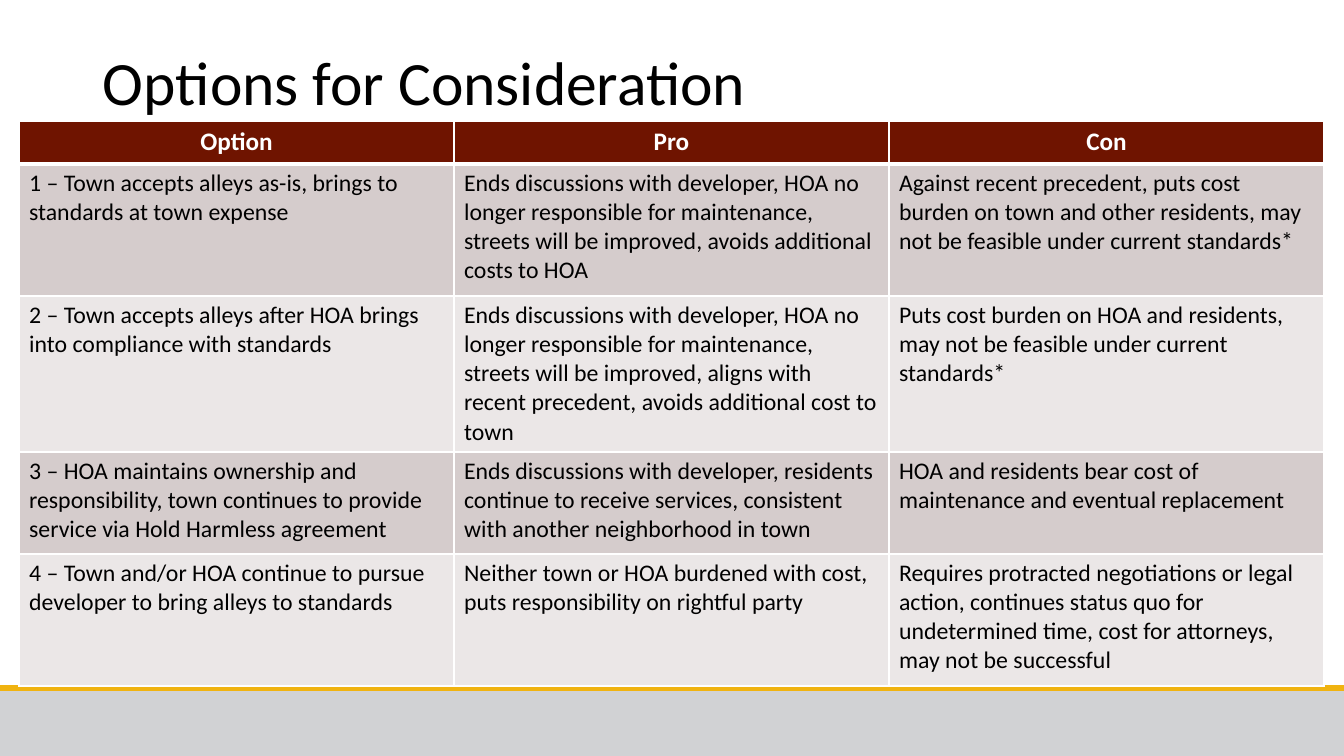
from dataclasses import dataclass

from lxml.etree import SubElement
from pptx import Presentation
from pptx.dml.color import RGBColor
from pptx.enum.shapes import MSO_CONNECTOR, MSO_SHAPE
from pptx.enum.text import MSO_ANCHOR, PP_ALIGN
from pptx.oxml.ns import qn
from pptx.util import Emu, Pt

EMU_PER_PX = 914400 / 100.8
SLIDE_W, SLIDE_H = 1344, 756
FOOTER_TOP = 688
TABLE_LEFT, TABLE_TOP, COL_W = 19, 121, 435
ROW_HEIGHTS = [43, 132, 156, 102, 132]
FONT = "Calibri"
COLORS = {
    "footer": "D1D2D4",
    "rule": "F0B310",
    "header": "6F1400",
    "odd": "D5CCCC",
    "even": "EBE7E7",
    "white": "FFFFFF",
    "black": "000000",
}


@dataclass
class Option:
    name: str
    pro: str
    con: str


HEADER = Option("Option", "Pro", "Con")
OPTIONS = [
    Option(
        "1 – Town accepts alleys as-is, brings to standards at town expense",
        "Ends discussions with developer, HOA no longer responsible for maintenance, "
        "streets will be improved, avoids additional costs to HOA",
        "Against recent precedent, puts cost burden on town and other residents, "
        "may not be feasible under current standards*",
    ),
    Option(
        "2 – Town accepts alleys after HOA brings into compliance with standards",
        "Ends discussions with developer, HOA no longer responsible for maintenance, "
        "streets will be improved, aligns with recent precedent, avoids additional cost to town",
        "Puts cost burden on HOA and residents, may not be feasible under current standards*",
    ),
    Option(
        "3 – HOA maintains ownership and responsibility, town continues to provide "
        "service via Hold Harmless agreement",
        "Ends discussions with developer, residents continue to receive services, "
        "consistent with another neighborhood in town",
        "HOA and residents bear cost of maintenance and eventual replacement",
    ),
    Option(
        "4 – Town and/or HOA continue to pursue developer to bring alleys to standards",
        "Neither town or HOA burdened with cost, puts responsibility on rightful party",
        "Requires protracted negotiations or legal action, continues status quo for "
        "undetermined time, cost for attorneys, may not be successful",
    ),
]


def px(n: int) -> Emu:
    return Emu(round(n * EMU_PER_PX))


def rgb(name: str) -> RGBColor:
    return RGBColor.from_string(COLORS[name])


def style_text(p, size: int, color: str, bold: bool = False) -> None:
    for r in p.runs:
        r.font.name = FONT
        r.font.size = Pt(size)
        r.font.bold = bold
        r.font.color.rgb = rgb(color)


def add_footer(s) -> None:
    band = s.shapes.add_shape(
        MSO_SHAPE.RECTANGLE, 0, px(FOOTER_TOP), px(SLIDE_W), px(SLIDE_H - FOOTER_TOP)
    )
    band.shadow.inherit = False
    band.fill.solid()
    band.fill.fore_color.rgb = rgb("footer")
    band.line.fill.background()
    rule = s.shapes.add_connector(
        MSO_CONNECTOR.STRAIGHT, 0, px(FOOTER_TOP), px(SLIDE_W), px(FOOTER_TOP)
    )
    rule.line.color.rgb = rgb("rule")
    rule.line.width = Pt(4.5)
    SubElement(rule._element.spPr, qn("a:effectLst"))


def add_title(s, text: str) -> None:
    sp = s.shapes.add_textbox(px(93), px(13), px(1159), px(146))
    tf = sp.text_frame
    tf.word_wrap = True
    tf.vertical_anchor = MSO_ANCHOR.MIDDLE
    tf.text = text
    p = tf.paragraphs[0]
    p.line_spacing = 0.9
    style_text(p, 44, "black")


def set_borders(cell, top: int, bottom: int) -> None:
    tc_pr = cell._tc.get_or_add_tcPr()
    for side, width in (("L", 1), ("R", 1), ("T", top), ("B", bottom)):
        ln = SubElement(tc_pr, qn(f"a:ln{side}"), w=str(Pt(width)))
        fill = SubElement(ln, qn("a:solidFill"))
        SubElement(fill, qn("a:srgbClr"), val=COLORS["white"])


def fill_cell(cell, text: str, row: int) -> None:
    is_header = row == 0
    set_borders(cell, top=3 if row == 1 else 1, bottom=3 if is_header else 1)
    cell.fill.solid()
    cell.fill.fore_color.rgb = rgb("header" if is_header else "odd" if row % 2 else "even")
    cell.text_frame.text = text
    p = cell.text_frame.paragraphs[0]
    if is_header:
        p.alignment = PP_ALIGN.CENTER
        style_text(p, 18, "white", bold=True)
    else:
        style_text(p, 17, "black")


def add_options_table(s) -> None:
    rows = [HEADER, *OPTIONS]
    table = s.shapes.add_table(
        len(rows), 3, px(TABLE_LEFT), px(TABLE_TOP), px(3 * COL_W), px(sum(ROW_HEIGHTS))
    ).table
    for col in table.columns:
        col.width = px(COL_W)
    for i, (option, height) in enumerate(zip(rows, ROW_HEIGHTS)):
        table.rows[i].height = px(height)
        for j, text in enumerate((option.name, option.pro, option.con)):
            fill_cell(table.cell(i, j), text, i)


def main() -> None:
    prs = Presentation()
    prs.slide_width, prs.slide_height = px(SLIDE_W), px(SLIDE_H)
    s = prs.slides.add_slide(prs.slide_layouts[6])
    add_footer(s)
    add_title(s, "Options for Consideration")
    add_options_table(s)
    prs.save("out.pptx")


if __name__ == "__main__":
    main()
